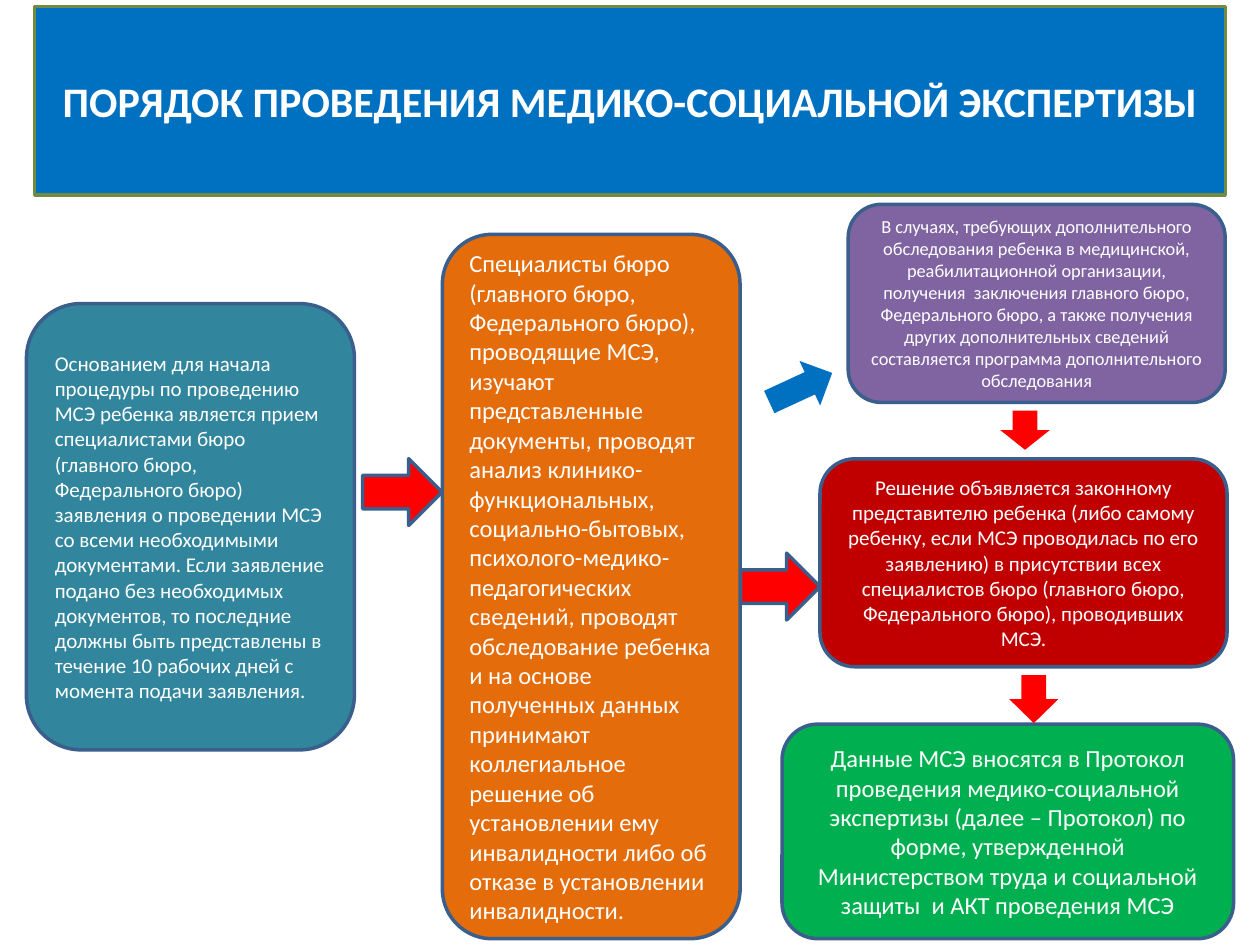
from dataclasses import dataclass

from pptx import Presentation
from pptx.dml.color import RGBColor
from pptx.enum.shapes import MSO_SHAPE as Shape
from pptx.enum.text import MSO_ANCHOR as Anchor, MSO_AUTO_SIZE as AutoSize, PP_ALIGN as Align
from pptx.util import Pt


@dataclass(frozen=True)
class Theme:
    font: str = "Calibri"
    text: str = "FFFFFF"
    blue: str = "0070C0"
    title_line: str = "738A42"
    outline: str = "3A5F8C"
    arrow: str = "FF0000"
    teal: str = "31859C"
    orange: str = "E46C0A"
    purple: str = "8064A2"
    crimson: str = "C00000"
    green: str = "00B050"
    title_size: float = 24
    large: float = 14
    medium: float = 12
    small: float = 10.5
    line_width: float = 2


class SlideBuilder:
    def __init__(self, slide, theme):
        self.slide = slide
        self.theme = theme

    def paint(self, shape, fill, line=None):
        shape.fill.solid()
        shape.fill.fore_color.rgb = RGBColor.from_string(fill)
        if line:
            shape.line.color.rgb = RGBColor.from_string(line)
            shape.line.width = Pt(self.theme.line_width)
        else:
            shape.line.fill.background()

    def set_text(self, shape, text, size, align, bold=False):
        frame = shape.text_frame
        frame.word_wrap = True
        frame.auto_size = AutoSize.NONE
        frame.vertical_anchor = Anchor.MIDDLE
        paragraph = frame.paragraphs[0]
        paragraph.alignment = align
        run = paragraph.add_run()
        run.text = text
        run.font.name = self.theme.font
        run.font.size = Pt(size)
        run.font.bold = bold
        run.font.color.rgb = RGBColor.from_string(self.theme.text)

    def title(self, text, left, top, width, height):
        heading = self.slide.shapes.title
        heading.left, heading.top = Pt(left), Pt(top)
        heading.width, heading.height = Pt(width), Pt(height)
        self.paint(heading, self.theme.blue, self.theme.title_line)
        self.set_text(heading, text, self.theme.title_size, Align.CENTER, bold=True)

    def preset(self, kind, frame, fill, line=None):
        shape = self.slide.shapes.add_shape(kind, *map(Pt, frame))
        shape.shadow.inherit = False
        self.paint(shape, fill, line)
        return shape

    def step(self, text, frame, fill, size, align=Align.CENTER):
        box = self.preset(Shape.ROUNDED_RECTANGLE, frame, fill, self.theme.outline)
        self.set_text(box, text, size, align)

    def right_arrow(self, left, top):
        self.preset(Shape.RIGHT_ARROW, (left, top, 45.4, 38.2),
                    self.theme.arrow, self.theme.outline)

    def down_arrow(self, left, top, height, fill, rotation=0):
        arrow = self.preset(Shape.DOWN_ARROW, (left, top, 28.1, height), fill)
        arrow.rotation = rotation


def main():
    theme = Theme()
    deck = Presentation()
    deck.slide_width, deck.slide_height = Pt(720), Pt(540)
    page = SlideBuilder(deck.slides.add_slide(deck.slide_layouts[5]), theme)

    page.title("ПОРЯДОК ПРОВЕДЕНИЯ МЕДИКО-СОЦИАЛЬНОЙ ЭКСПЕРТИЗЫ", 19.8, 3.6, 680.4, 108)

    page.right_arrow(207.2, 262.1)
    page.right_arrow(423.2, 316.1)

    page.step(
        "Основанием для начала процедуры по проведению МСЭ ребенка является прием "
        "специалистами бюро (главного бюро, Федерального бюро) заявления о проведении МСЭ "
        "со всеми необходимыми документами. Если заявление подано без необходимых "
        "документов, то последние должны быть представлены в течение 10 рабочих дней "
        "с момента подачи заявления.",
        (15.1, 173.5, 187.4, 255), theme.teal, theme.medium, Align.LEFT)
    page.step(
        "Специалисты бюро (главного бюро, Федерального бюро), проводящие МСЭ, изучают "
        "представленные документы, проводят анализ клинико-функциональных, "
        "социально-бытовых, психолого-медико-педагогических сведений, проводят "
        "обследование ребенка и на основе полученных данных принимают коллегиальное "
        "решение об установлении ему инвалидности либо об отказе в установлении "
        "инвалидности.",
        (252.8, 133.9, 170.1, 402.5), theme.orange, theme.large, Align.LEFT)
    page.step(
        "В случаях, требующих дополнительного обследования ребенка в медицинской, "
        "реабилитационной организации, получения  заключения главного бюро, Федерального "
        "бюро, а также получения других дополнительных сведений составляется программа "
        "дополнительного обследования",
        (484.7, 116.8, 215.4, 113.2), theme.purple, theme.small)
    page.step(
        "Решение объявляется законному представителю ребенка (либо самому ребенку, если "
        "МСЭ проводилась по его заявлению) в присутствии всех специалистов бюро (главного "
        "бюро, Федерального бюро), проводивших МСЭ.",
        (468.6, 262.2, 232.6, 118.8), theme.crimson, theme.medium)
    page.step(
        "Данные МСЭ вносятся в Протокол проведения медико-социальной экспертизы (далее – "
        "Протокол) по форме, утвержденной Министерством труда и социальной защиты  и АКТ "
        "проведения МСЭ",
        (446.9, 413.8, 258, 122.6), theme.green, theme.large)

    page.down_arrow(571.7, 234.7, 22.3, theme.arrow)
    page.down_arrow(576.7, 385.8, 27.4, theme.arrow)
    page.down_arrow(443.5, 201.6, 39.6, theme.blue, rotation=245.2)

    deck.save("out.pptx")


if __name__ == "__main__":
    main()
